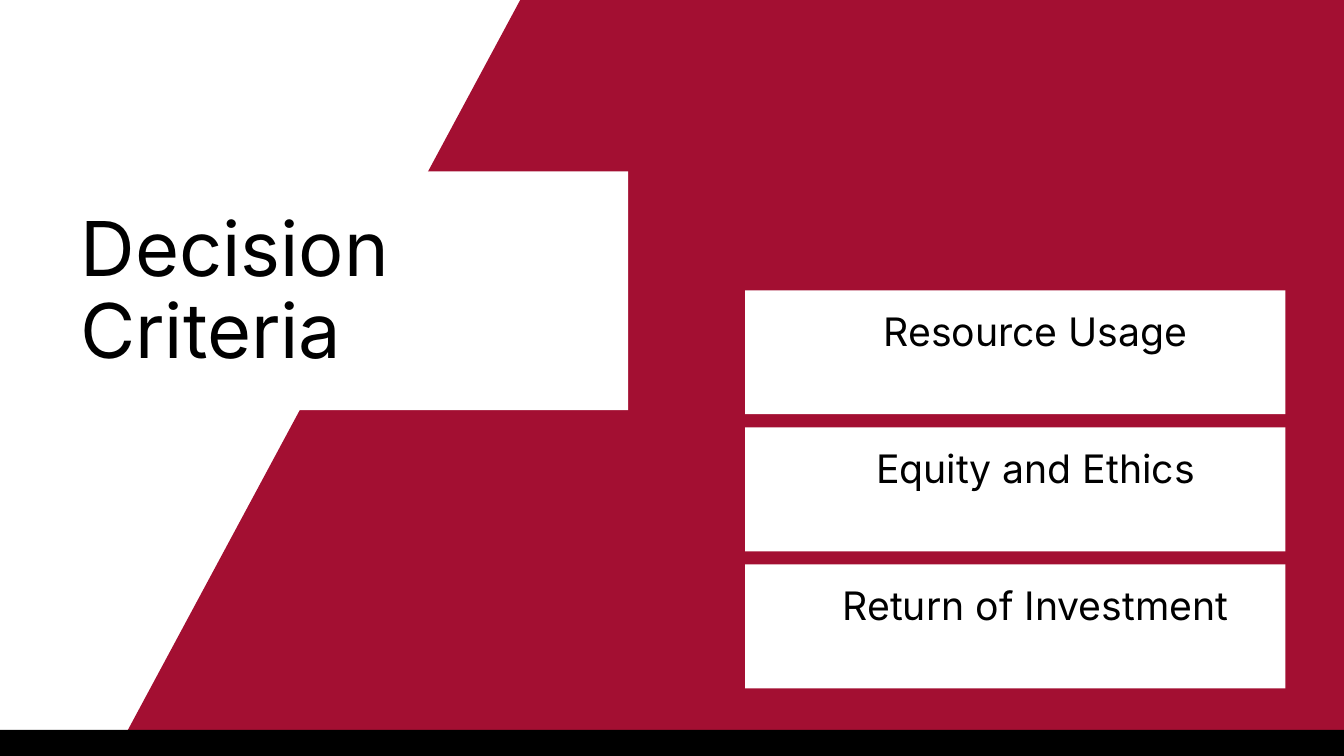
from pptx import Presentation
from pptx.dml.color import RGBColor
from pptx.enum.shapes import MSO_SHAPE
from pptx.enum.text import MSO_ANCHOR, PP_ALIGN
from pptx.util import Inches, Pt

CRIMSON = RGBColor(0xA3, 0x0F, 0x32)
BLACK = RGBColor(0, 0, 0)
WHITE = RGBColor(0xFF, 0xFF, 0xFF)

WIDTH, HEIGHT = 13.33, 7.5
CRITERIA = ["Resource Usage", "Equity and Ethics", "Return of Investment"]
CRITERIA_TOP, CRITERIA_PITCH = 2.88, 1.36


def paint(shape, color):
    shape.shadow.inherit = False
    shape.fill.solid()
    shape.fill.fore_color.rgb = color
    shape.line.fill.background()


def add_panel(left, top, width, height, color, text="", size=28,
              inset_top=0.4, align=PP_ALIGN.LEFT):
    """Add a plain rectangle, with top-anchored text if any is given."""
    panel = page.shapes.add_shape(MSO_SHAPE.RECTANGLE, Inches(left), Inches(top),
                                  Inches(width), Inches(height))
    paint(panel, color)
    if text:
        frame = panel.text_frame
        frame.word_wrap = True
        frame.vertical_anchor = MSO_ANCHOR.TOP
        frame.margin_left = Inches(0.8)
        frame.margin_right = Inches(0.4)
        frame.margin_top = Inches(inset_top)
        frame.margin_bottom = Inches(0.2)
        para = frame.paragraphs[0]
        para.text = text
        para.alignment = align
        para.line_spacing = 0.9
        para.font.name = "Inter"
        para.font.size = Pt(size)
        para.font.color.rgb = BLACK


deck = Presentation()
deck.slide_width = Inches(WIDTH)
deck.slide_height = Inches(HEIGHT)
page = deck.slides.add_slide(deck.slide_layouts[6])

outline = page.shapes.build_freeform(Inches(5.16), Inches(0))
outline.add_line_segments(
    [(Inches(x), Inches(y)) for x, y in [(WIDTH, 0), (WIDTH, HEIGHT), (1.13, HEIGHT)]],
    close=True)
paint(outline.convert_to_shape(), CRIMSON)

add_panel(0, 7.24, WIDTH, 0.26, BLACK)
add_panel(0, 1.7, 6.23, 2.37, WHITE, "Decision Criteria", size=54)

for row, criterion in enumerate(CRITERIA):
    add_panel(7.39, CRITERIA_TOP + row * CRITERIA_PITCH, 5.36, 1.23, WHITE,
              criterion, inset_top=0.22, align=PP_ALIGN.CENTER)

deck.save("out.pptx")
